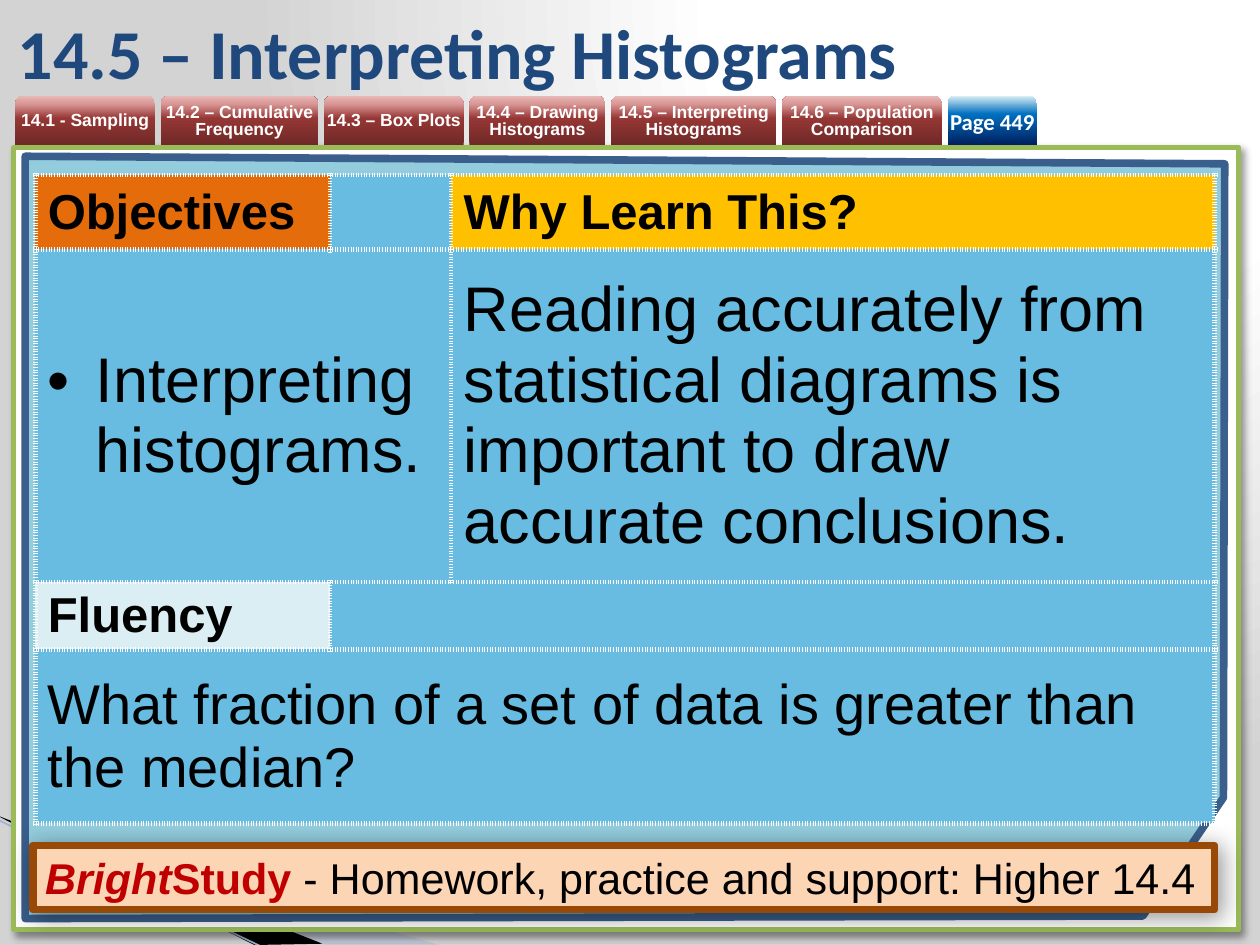
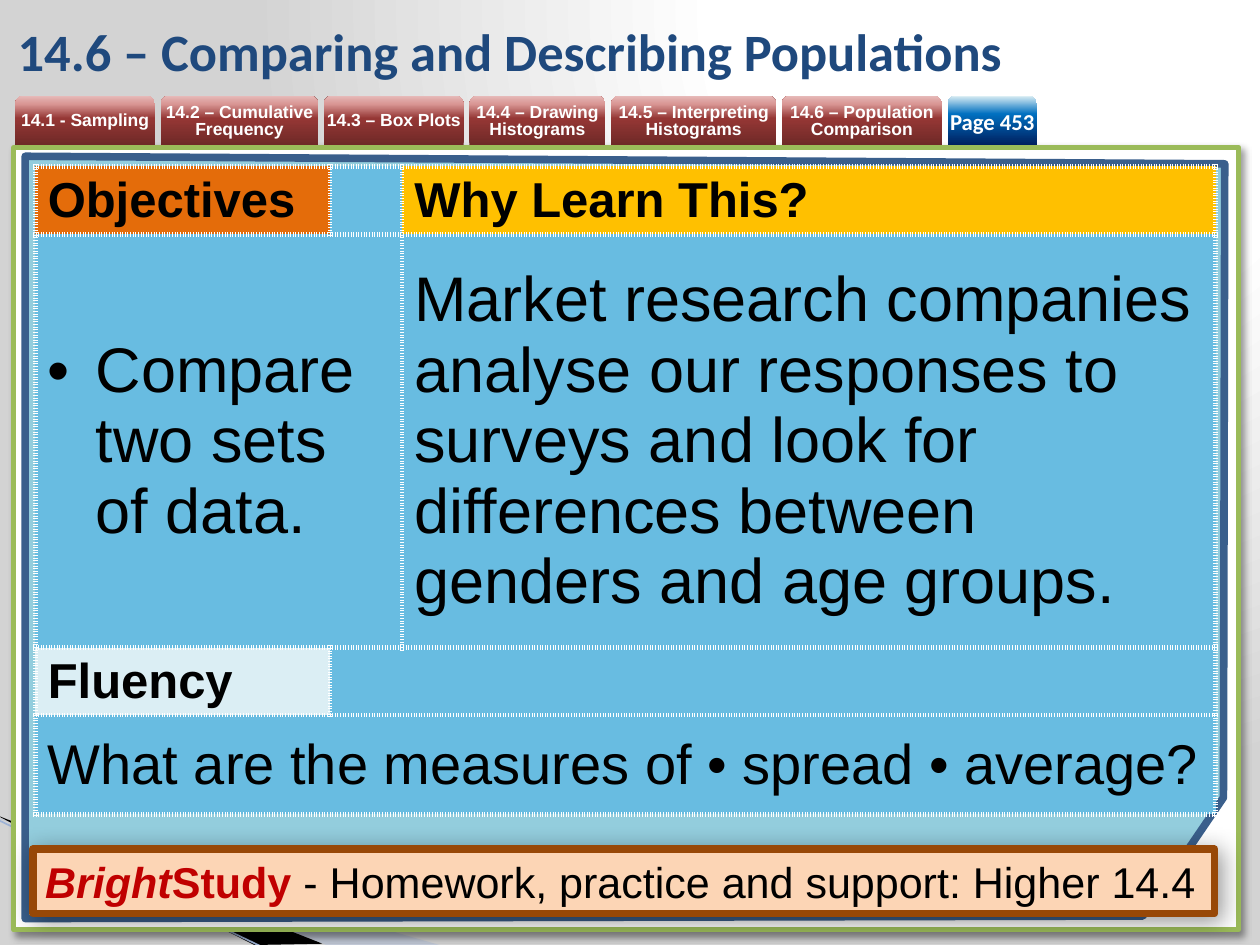
from lxml.etree import SubElement
from pptx import Presentation
from pptx.dml.color import RGBColor as RGB
from pptx.enum.shapes import MSO_CONNECTOR as CONNECTOR, MSO_SHAPE as SHAPE
from pptx.enum.text import MSO_ANCHOR as ANCHOR, MSO_AUTO_SIZE as AUTO_SIZE, PP_ALIGN as ALIGN
from pptx.oxml import parse_xml
from pptx.oxml.ns import nsdecls, qn
from pptx.util import Inches, Pt

COLORS = {
    "black": "000000", "white": "FFFFFF", "title": "1F497D",
    "swoosh": "A7B9DB", "swoosh_line": "9EB3D6",
    "frame": "9BBB59", "panel": "93CDDD", "panel_line": "3A5F8C",
    "cell": "68BCE1", "objectives": "E46C0A", "why": "FFC000", "fluency": "DBEEF4",
    "homework": "FCD5B5", "homework_line": "984807", "homework_name": "C00000",
}
CHAPTER_STOPS = [(0, "6F2927"), (54, "953735"), (83, "D99694"), (100, "E6B9B8")]
PAGE_STOPS = [(0, "002060"), (63, "0070C0"), (100, "DBEEF4")]
BACKDROP_STOPS = [(0, "FFFFFF"), (40, "FFFFFF"), (100, "D3D3D3")]
UPWARD = '<a:lin ang="16200000" scaled="0"/>'
FROM_TOP = '<a:path path="circle"><a:fillToRect l="65000" b="98000"/></a:path>'

CHAPTER = [
    ("14.1 - Sampling", 111),
    ("14.2 – Cumulative Frequency", 125),
    ("14.3 – Box Plots", 111),
    ("14.4 – Drawing Histograms", 108),
    ("14.5 – Interpreting Histograms", 131),
    ("14.6 – Population Comparison", 127),
]
TAB_LEFT, TAB_TOP, TAB_HEIGHT, TAB_GAP, PAGE_WIDTH = 12, 76, 39, 4.5, 71

LESSONS = [
    {
        "title": "14.5 – Interpreting Histograms", "title_size": 40, "page": "Page 449",
        "objective": "Interpreting histograms.",
        "why": "Reading accurately from statistical diagrams is important to draw accurate conclusions.",
        "fluency": "What fraction of a set of data is greater than the median?",
        "top": 139, "columns": [234, 96, 606], "rows": [59, 264, 49, 138], "homework_top": 671,
    },
    {
        "title": "14.6 – Comparing and Describing Populations", "title_size": 30, "page": "Page 453",
        "objective": "Compare two sets of data.",
        "why": "Market research companies analyse our responses to surveys and look for "
               "differences between genders and age groups.",
        "fluency": "What are the measures of • spread • average?",
        "top": 132, "columns": [234, 57, 646], "rows": [54, 328, 51, 79], "homework_top": 674,
    },
]


def write(paragraph, text, size, color="black", font="Arial", bold=False, italic=False,
          align=ALIGN.LEFT, spacing=None):
    paragraph.alignment = align
    if spacing:
        paragraph.line_spacing = Pt(spacing)
    run = paragraph.add_run()
    run.text = text
    run.font.size, run.font.name = Pt(size), font
    run.font.bold, run.font.italic = bold, italic
    run.font.color.rgb = RGB.from_string(COLORS[color])


def shade(properties, stops, direction):
    marks = "".join(f'<a:gs pos="{share * 1000}"><a:srgbClr val="{color}"/></a:gs>'
                    for share, color in stops)
    gradient = parse_xml(f'<a:gradFill {nsdecls("a")} rotWithShape="1">'
                         f'<a:gsLst>{marks}</a:gsLst>{direction}</a:gradFill>')
    solid = properties.find(qn("a:solidFill"))
    properties.replace(solid, gradient)


prs = Presentation()
prs.slide_width, prs.slide_height = Inches(10), Inches(7.5)
UNIT = prs.slide_width // 1000

master = prs.slide_master
master.background.fill.solid()
master.background.fill.fore_color.rgb = RGB.from_string(COLORS["white"])
shade(master.element.find(".//" + qn("p:bgPr")), BACKDROP_STOPS, FROM_TOP)

for lesson in LESSONS:
    slide = prs.slides.add_slide(prs.slide_layouts[5])
    shapes = slide.shapes

    outlines = [
        ("swoosh", [(-1, 650), (349, 750), (259, 750), (-1, 649)]),
        ("black", [(0, 648), (256, 749), (202, 750), (1, 649)]),
        ("panel", [(20, 124), (972, 130), (971, 633), (907, 727), (20, 729)]),
    ]
    for color, points in outlines:
        if color == "panel":
            edge = shapes.add_connector(CONNECTOR.STRAIGHT, -UNIT, 651 * UNIT, 209 * UNIT, 752 * UNIT)
            edge.line.color.rgb = RGB.from_string(COLORS["swoosh_line"])
            edge.line.width = Pt(0.95)
            SubElement(edge.element.spPr, qn("a:effectLst"))
            frame = shapes.add_shape(SHAPE.RECTANGLE, 11 * UNIT, 117 * UNIT, 972 * UNIT, 621 * UNIT)
        builder = shapes.build_freeform(*points[0], scale=UNIT)
        builder.add_line_segments(points[1:], close=True)
        outline = builder.convert_to_shape()
        outline.shadow.inherit = False
        outline.fill.solid()
        outline.fill.fore_color.rgb = RGB.from_string(COLORS[color])
        outline.line.fill.background()
        if color == "swoosh":
            tint = outline.element.spPr.find(".//" + qn("a:srgbClr"))
            SubElement(tint, qn("a:alpha"), val="40000")
    outline.line.color.rgb = RGB.from_string(COLORS["panel_line"])
    outline.line.width = Pt(4.33)

    title = shapes.title
    title.left, title.top, title.width, title.height = 4 * UNIT, 5 * UNIT, 827 * UNIT, 71 * UNIT
    title.text_frame.auto_size = AUTO_SIZE.NONE
    title.text_frame.vertical_anchor = ANCHOR.MIDDLE
    write(title.text_frame.paragraphs[0], lesson["title"], lesson["title_size"],
          color="title", font="Calibri", bold=True)

    left = TAB_LEFT
    for label, width in CHAPTER + [(lesson["page"], PAGE_WIDTH)]:
        is_page = label == lesson["page"]
        tab = shapes.add_shape(SHAPE.ROUND_2_SAME_RECTANGLE, int(left * UNIT), TAB_TOP * UNIT,
                               width * UNIT, TAB_HEIGHT * UNIT)
        tab.shadow.inherit = False
        tab.line.fill.background()
        tab.fill.solid()
        shade(tab.element.spPr, PAGE_STOPS if is_page else CHAPTER_STOPS, UPWARD)
        text = tab.text_frame
        text.margin_left = text.margin_right = text.margin_top = text.margin_bottom = 0
        text.word_wrap, text.vertical_anchor = True, ANCHOR.MIDDLE
        write(text.paragraphs[0], label, 13 if is_page else 10, color="white", bold=True,
              font="Calibri" if is_page else "Arial", align=ALIGN.CENTER,
              spacing=None if is_page else 10)
        left += width + TAB_GAP

    columns, rows = lesson["columns"], lesson["rows"]
    table = shapes.add_table(len(rows), len(columns), 28 * UNIT, lesson["top"] * UNIT,
                             sum(columns) * UNIT, sum(rows) * UNIT).table
    table.first_row = table.horz_banding = False
    for column, width in zip(table.columns, columns):
        column.width = width * UNIT
    for row, height in zip(table.rows, rows):
        row.height = height * UNIT
    for first, last in [((1, 0), (1, 1)), ((2, 1), (2, 2)), ((3, 0), (3, 2))]:
        table.cell(*first).merge(table.cell(*last))

    contents = {
        (0, 0): ("Objectives", 28, "objectives"),
        (0, 2): ("Why Learn This?", 28, "why"),
        (1, 0): (lesson["objective"], 36, "cell"),
        (1, 2): (lesson["why"], 36, "cell"),
        (2, 0): ("Fluency", 28, "fluency"),
        (3, 0): (lesson["fluency"], 32, "cell"),
    }
    for r in range(len(rows)):
        for c in range(len(columns)):
            cell = table.cell(r, c)
            words, size, color = contents.get((r, c), ("", 0, "cell"))
            cell.vertical_anchor = ANCHOR.MIDDLE
            cell.fill.solid()
            cell.fill.fore_color.rgb = RGB.from_string(COLORS[color])
            cell_format = cell._tc.get_or_add_tcPr()
            for place, side in enumerate("LRTB"):
                cell_format.insert(place, parse_xml(
                    f'<a:ln{side} {nsdecls("a")} w="{Pt(3)}"><a:solidFill>'
                    f'<a:srgbClr val="{COLORS["white"]}"/></a:solidFill>'
                    f'<a:prstDash val="sysDot"/></a:ln{side}>'))
            if words:
                paragraph = cell.text_frame.paragraphs[0]
                if (r, c) == (1, 0):
                    bullet = paragraph._p.get_or_add_pPr()
                    bullet.set("marL", str(38 * UNIT))
                    bullet.set("indent", str(-38 * UNIT))
                    SubElement(bullet, qn("a:buFont"), typeface="Arial")
                    SubElement(bullet, qn("a:buChar"), char="•")
                write(paragraph, words, size, bold=size == 28)

    homework = shapes.add_shape(SHAPE.RECTANGLE, 26 * UNIT, lesson["homework_top"] * UNIT,
                                938 * UNIT, 51 * UNIT)
    for box, fill, line, weight, blur in [(frame, "white", "frame", 3, 4),
                                          (homework, "homework", "homework_line", 4.33, 13)]:
        box.fill.solid()
        box.fill.fore_color.rgb = RGB.from_string(COLORS[fill])
        box.line.color.rgb = RGB.from_string(COLORS[line])
        box.line.width = Pt(weight)
        box.shadow.inherit = False
        box.element.spPr.find(qn("a:effectLst")).append(parse_xml(
            f'<a:outerShdw {nsdecls("a")} blurRad="{Pt(blur)}" dist="{Pt(3)}" dir="2700000" '
            f'algn="tl" rotWithShape="0"><a:srgbClr val="{COLORS["black"]}">'
            f'<a:alpha val="40000"/></a:srgbClr></a:outerShdw>'))
    homework.text_frame.word_wrap = True
    homework.text_frame.vertical_anchor = ANCHOR.MIDDLE
    support = homework.text_frame.paragraphs[0]
    write(support, "Bright", 24.6, color="homework_name", bold=True, italic=True)
    write(support, "Study ", 24.6, color="homework_name", bold=True)
    write(support, "- Homework, practice and support: Higher 14.4", 24.6)

prs.save("out.pptx")
